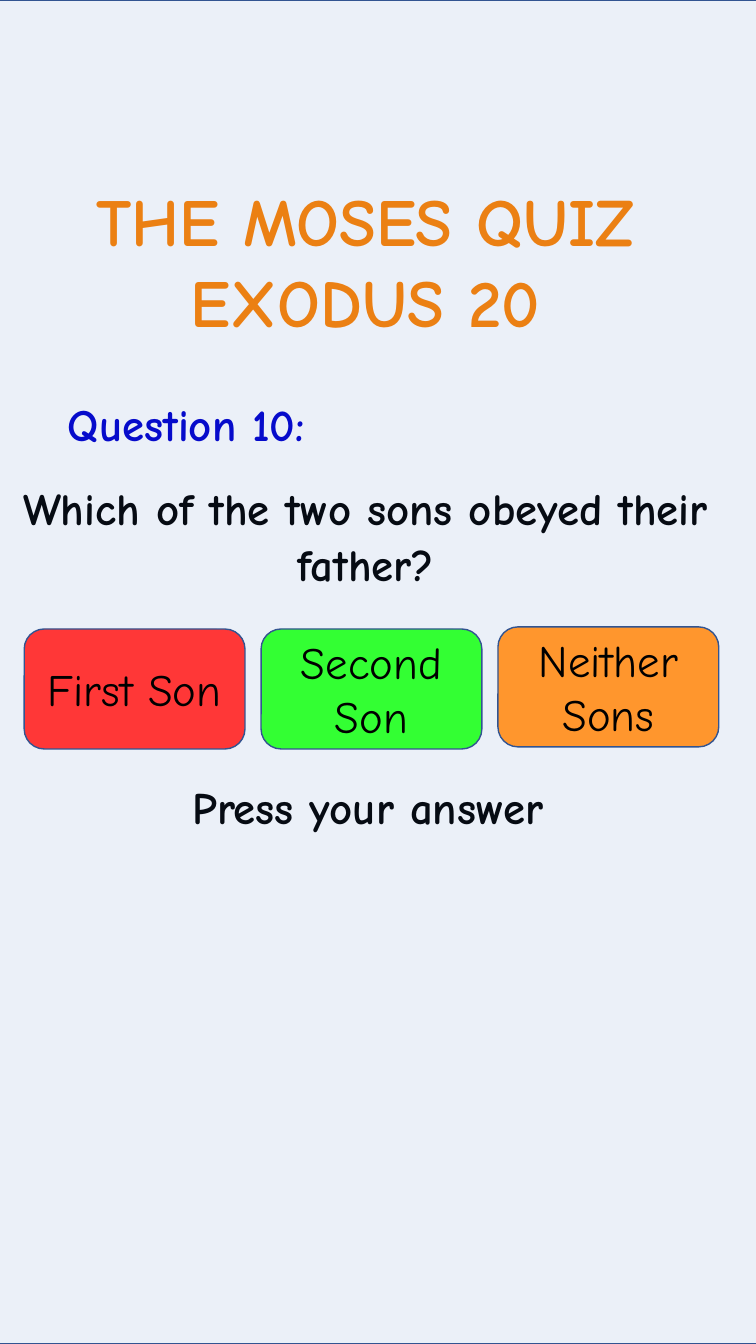
from lxml import etree
from pptx import Presentation
from pptx.dml.color import RGBColor
from pptx.enum.shapes import MSO_SHAPE as Shape
from pptx.enum.text import MSO_ANCHOR as Anchor, PP_ALIGN as Align
from pptx.oxml.ns import qn
from pptx.util import Pt

FONT = "Comic Neue"
COLORS = {
    "title": "FF8200", "label": "0000CC", "text": "000000",
    "tint": "4472C4", "line": "325491",
    "red": "FF3737", "green": "33FF33", "orange": "FF962D",
}


def color(name):
    return RGBColor.from_string(COLORS[name])


def write(para, text, size=32, tone="text", bold=True):
    run = para.add_run()
    run.text = text
    font = run.font
    font.name, font.size, font.bold = FONT, Pt(size), bold
    font.color.rgb = color(tone)


def add_text(slide, box, lines, size=32, tone="text", wrap=True,
             align=Align.CENTER, space=None, before=0):
    frame = slide.shapes.add_textbox(*map(Pt, box)).text_frame
    frame.word_wrap = wrap
    for i, line in enumerate(lines):
        para = frame.add_paragraph() if i else frame.paragraphs[0]
        para.alignment = align
        para.line_spacing = space
        para.space_before = Pt(before)
        write(para, line, size, tone)


def add_panel(slide, kind, box, fill):
    panel = slide.shapes.add_shape(kind, *map(Pt, box))
    panel.shadow.inherit = False
    panel.fill.solid()
    panel.fill.fore_color.rgb = color(fill)
    panel.line.color.rgb = color("line")
    panel.line.width = Pt(1)
    return panel


def add_tint(slide, box, alpha):
    panel = add_panel(slide, Shape.RECTANGLE, box, "tint")
    fill = panel.fill._xPr.find(qn("a:solidFill"))
    etree.SubElement(fill[0], qn("a:alpha"), val=str(alpha * 1000))


def add_button(slide, box, text, fill):
    frame = add_panel(slide, Shape.ROUNDED_RECTANGLE, box, fill).text_frame
    frame.word_wrap = True
    frame.vertical_anchor = Anchor.MIDDLE
    para = frame.paragraphs[0]
    para.alignment = Align.CENTER
    write(para, text, bold=False)


def main():
    """Build the quiz slide and save it."""
    deck = Presentation()
    deck.slide_width, deck.slide_height = Pt(540), Pt(960)
    slide = deck.slides.add_slide(deck.slide_layouts[6])

    add_text(slide, (21.6, 124.6, 496, 123.8),
             ["THE MOSES QUIZ ", "EXODUS 20 "], 48, "title", wrap=False)
    add_text(slide, (23.8, 280, 218.9, 46), ["Question 10:"],
             tone="label", wrap=False)
    add_text(slide, (0, 338.4, 522.7, 117.4),
             ["Which of the two sons obeyed their father?"],
             space=Pt(40), before=7.5)
    add_text(slide, (130.3, 558, 303.8, 51.8), ["Press your answer"],
             align=Align.LEFT, space=0.9, before=7.5)
    add_tint(slide, (-38.9, 0, 617.8, 960), 10)

    answers = [("First Son", "red", 449.3), ("Second Son", "green", 449.3),
               ("Neither Sons", "orange", 447.8)]
    for i, (text, fill, top) in enumerate(answers):
        add_button(slide, (17.3 + 169.2 * i, top, 157.7, 85.7), text, fill)

    deck.save("out.pptx")


if __name__ == "__main__":
    main()
